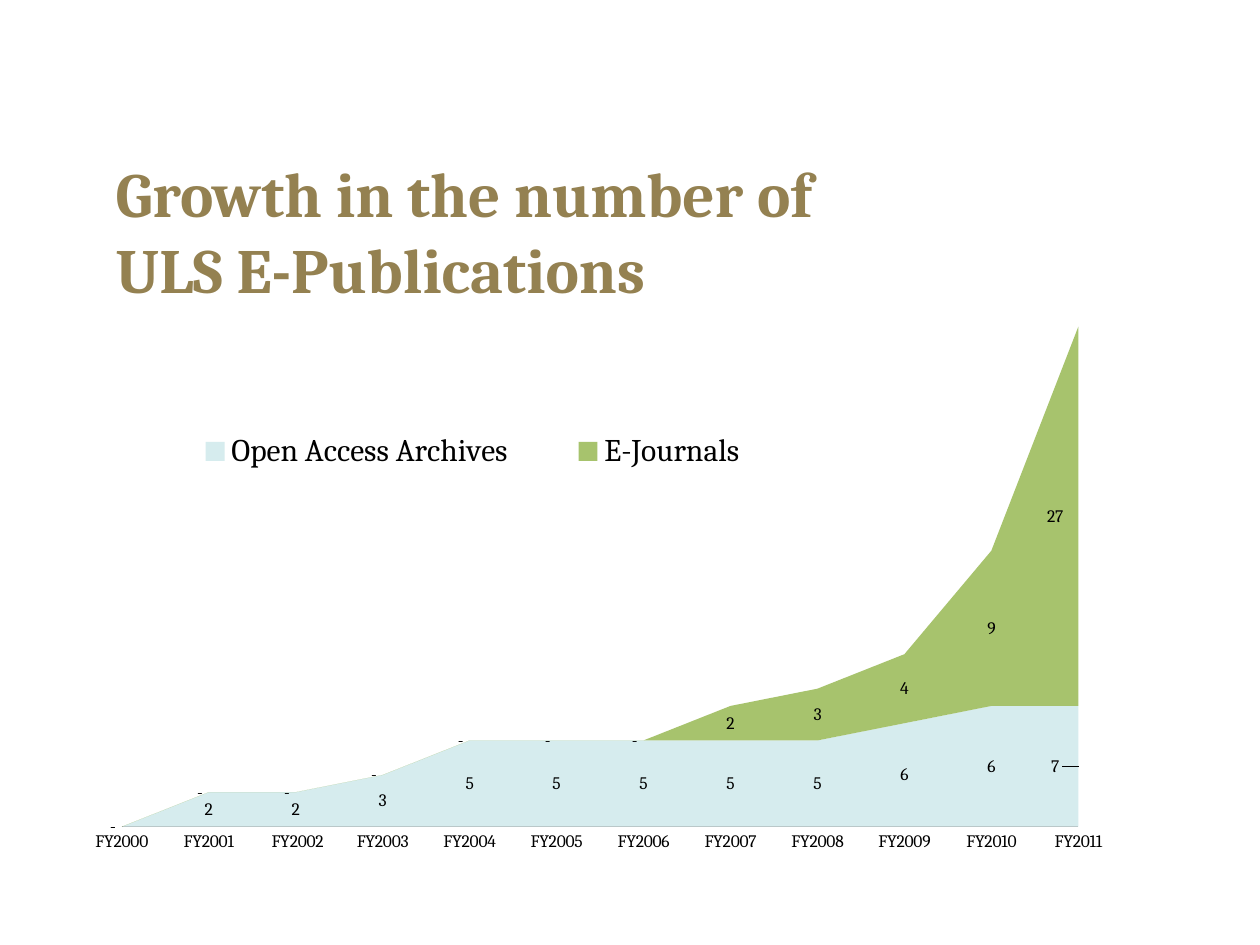
from dataclasses import dataclass, field

from lxml.etree import SubElement
from pptx import Presentation
from pptx.chart.data import CategoryChartData
from pptx.dml.color import RGBColor
from pptx.enum.chart import XL_CHART_TYPE as Kind
from pptx.enum.chart import XL_LEGEND_POSITION as Side
from pptx.enum.chart import XL_TICK_MARK as Tick
from pptx.enum.text import MSO_ANCHOR as Anchor
from pptx.oxml import parse_xml
from pptx.oxml.ns import nsdecls, qn
from pptx.util import Cm, Pt

FONT = "Cambria"
BLACK = RGBColor(0, 0, 0)
GOLD = RGBColor(0x94, 0x81, 0x51)
PALE = RGBColor(0xD6, 0xEC, 0xEE)
GREEN = RGBColor(0x9B, 0xBB, 0x59)
GREY = RGBColor(0x86, 0x86, 0x86)
COUNT = '_(* #,##0_);_(* \\(#,##0\\);_(* "-"??_);_(@_)'
YEARS = ["FY2000", "FY2001", " FY2002"] + [f"FY{y}" for y in range(2003, 2012)]
LAST = len(YEARS) - 1


@dataclass
class Layer:
    name: str
    vals: list[int]
    color: RGBColor
    alpha: int = 100
    notes: dict[int, str] = field(default_factory=dict)


LAYERS = [
    Layer("Open Access Archives", [0, 2, 2, 3, 5, 5, 5, 5, 5, 6, 7, 7], PALE,
          notes={10: " 6 ", LAST: "7 "}),
    Layer("E-Journals", [0, 0, 0, 0, 0, 0, 0, 2, 3, 4, 9, 22], GREEN, 88,
          {LAST: "27 "}),
]


def set_font(font, size: float, color: RGBColor = BLACK, bold: bool = False) -> None:
    font.name = FONT
    font.size = Pt(size)
    font.bold = bold
    font.color.rgb = color


def place(node, spot: int, **parts) -> None:
    """Give a chart part a manual layout as its child number spot."""
    for old in node.findall(qn("c:layout")):
        node.remove(old)
    root = parse_xml(f"<c:layout {nsdecls('c')}><c:manualLayout/></c:layout>")
    for tag, val in parts.items():
        SubElement(root[0], qn(f"c:{tag}")).set("val", str(val))
    node.insert(spot, root)


def style(series, layer: Layer) -> None:
    fill = series.format.fill
    fill.solid()
    fill.fore_color.rgb = layer.color
    if layer.alpha < 100:
        tint = series.format.fill._xPr.find(".//" + qn("a:srgbClr"))
        SubElement(tint, qn("a:alpha")).set("val", str(layer.alpha * 1000))
    series.format.line.fill.background()

    labels = series.data_labels
    labels.show_value = True
    labels.number_format = COUNT
    labels.number_format_is_linked = False
    set_font(labels.font, 10)
    for idx, text in layer.notes.items():
        label = series.points[idx].data_label
        run = label.text_frame.paragraphs[0].add_run()
        run.text = text
        set_font(run.font, 10)
        if idx == LAST:
            place(label._dLbl, 1, x=-0.02, y=0)


def add_areas(slide) -> None:
    data = CategoryChartData(number_format=COUNT)
    data.categories = YEARS
    for layer in LAYERS:
        data.add_series(layer.name, layer.vals)
    chart = slide.shapes.add_chart(Kind.AREA_STACKED, Cm(1.85), Cm(2.82),
                                   Cm(21.62), Cm(15.7), data).chart
    set_font(chart.font, 10)
    chart.has_title = False
    chart.plots[0].vary_by_categories = False
    for series, layer in zip(chart.plots[0].series, LAYERS):
        style(series, layer)

    years = chart.category_axis
    years.major_tick_mark = years.minor_tick_mark = Tick.NONE
    years.has_major_gridlines = False
    years.format.line.color.rgb = GREY
    set_font(years.tick_labels.font, 10)
    scale = chart.value_axis
    scale.minimum_scale, scale.maximum_scale = 0, 35
    scale.has_major_gridlines = False
    scale.visible = False

    chart.has_legend = True
    legend = chart.legend
    legend.position = Side.TOP
    legend.include_in_layout = False
    set_font(legend.font, 18)
    place(legend._element, 1, xMode="edge", yMode="edge",
          x=0.05, y=0.37, w=0.61, h=0.06)
    area = chart._chartSpace.find(".//" + qn("c:plotArea"))
    place(area, 0, layoutTarget="inner", xMode="edge", yMode="edge",
          x=0.028, y=0.107, w=0.892, h=0.775)


def add_title(slide, lines: list[str]) -> None:
    frame = slide.shapes.add_textbox(Cm(2.08), Cm(3.12), Cm(22.02), Cm(4.39)).text_frame
    frame.word_wrap = True
    frame.vertical_anchor = Anchor.TOP
    frame.margin_top = 0
    para = frame.paragraphs[0]
    for i, line in enumerate(lines):
        if i:
            para.add_line_break()
        run = para.add_run()
        run.text = line
        set_font(run.font, 36, GOLD, True)


def main() -> None:
    deck = Presentation()
    deck.slide_width, deck.slide_height = Cm(25.4), Cm(19.05)
    slide = deck.slides.add_slide(deck.slide_layouts[6])
    add_areas(slide)
    add_title(slide, ["Growth in the number of", "ULS E-Publications"])
    deck.save("out.pptx")


if __name__ == "__main__":
    main()
